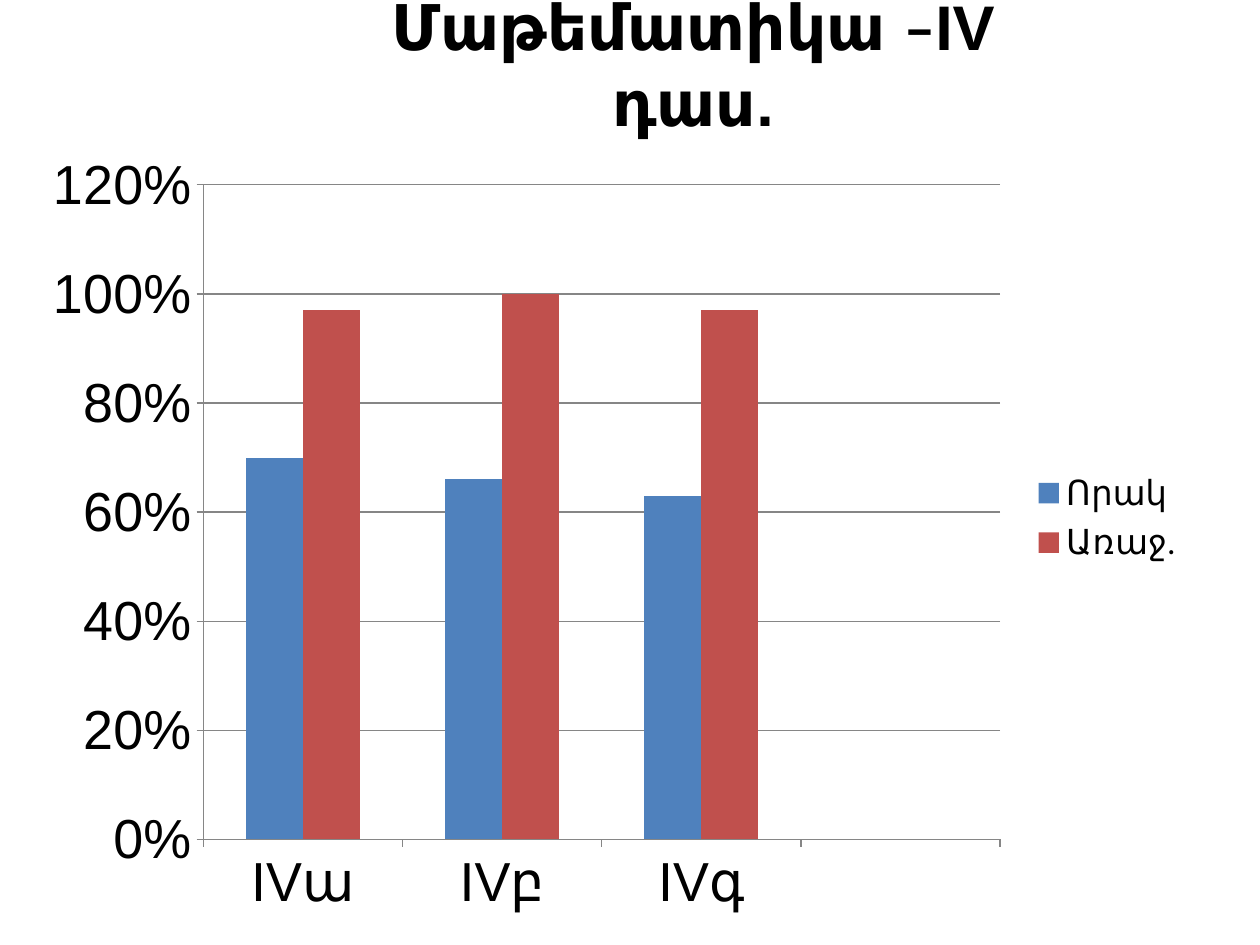
from lxml import etree
from pptx import Presentation
from pptx.chart.data import CategoryChartData
from pptx.dml.color import RGBColor
from pptx.enum.chart import XL_CHART_TYPE as ChartType, XL_LEGEND_POSITION as LegendPos
from pptx.enum.chart import XL_TICK_MARK as TickMark
from pptx.enum.text import MSO_ANCHOR, MSO_AUTO_SIZE, PP_ALIGN
from pptx.oxml.ns import qn
from pptx.util import Inches, Pt

BLACK = RGBColor(0x00, 0x00, 0x00)
GREY = RGBColor(0x86, 0x86, 0x86)
BLUE = RGBColor(0x4F, 0x81, 0xBD)
RED = RGBColor(0xC0, 0x50, 0x4D)

prs = Presentation()
prs.slide_width, prs.slide_height = Inches(10), Inches(7.5)
slide = prs.slides.add_slide(prs.slide_layouts[5])

# Title
title = slide.shapes.title
title.left, title.top = Inches(2.5), Inches(0.15)
title.width, title.height = Inches(6), Inches(0.71)
frame = title.text_frame
frame.word_wrap = True
frame.auto_size = MSO_AUTO_SIZE.NONE
frame.vertical_anchor = MSO_ANCHOR.MIDDLE
heading = frame.paragraphs[0]
heading.alignment = PP_ALIGN.CENTER
heading.font.size = Pt(36)
heading.font.bold = True
heading.font.color.rgb = BLACK
for text, font_name in (("Մաթեմատիկա ", "Arial"), ("–", "Calibri"), ("IV դաս.", "Arial")):
    run = heading.add_run()
    run.text = text
    run.font.name = font_name

# Results by class, with an empty fourth place
results = CategoryChartData(number_format="0%")
results.categories = ["IVա", "IVբ", "IVգ", ""]
results.add_series("Որակ", (0.7, 0.66, 0.63, None))
results.add_series("Առաջ.", (0.97, 1, 0.97, None))
chart = slide.shapes.add_chart(ChartType.COLUMN_CLUSTERED, Inches(0.42), Inches(1.08),
                               Inches(9.08), Inches(6.17), results).chart
chart.has_title = False
chart.font.size = Pt(10)
chart.font.name = "Calibri"
chart.font.color.rgb = BLACK

# Columns
plot = chart.plots[0]
plot.gap_width = 150
plot.overlap = 0
plot.vary_by_categories = False
for series, color in zip(plot.series, (BLUE, RED)):
    series.format.fill.solid()
    series.format.fill.fore_color.rgb = color

# Axes
percent_axis = chart.value_axis
percent_axis.minimum_scale = 0
percent_axis.maximum_scale = 1.2
percent_axis.major_unit = 0.2
percent_axis.tick_labels.number_format = "0%"
percent_axis.tick_labels.number_format_is_linked = False
percent_axis.has_major_gridlines = True
percent_axis.major_gridlines.format.line.color.rgb = GREY
for axis in (chart.category_axis, percent_axis):
    axis.major_tick_mark = TickMark.OUTSIDE
    axis.minor_tick_mark = TickMark.NONE
    axis.format.line.color.rgb = GREY
    axis.tick_labels.font.size = Pt(32)
    axis.tick_labels.font.name = "Arial"
    axis.tick_labels.font.color.rgb = BLACK

# Legend
chart.has_legend = True
chart.legend.position = LegendPos.RIGHT
chart.legend.include_in_layout = False
chart.legend.font.size = Pt(20)

# Fixed place of the plot area, as shares of the chart
plot_area = plot._element.getparent()
for old_layout in plot_area.findall(qn("c:layout")):
    plot_area.remove(old_layout)
layout = etree.Element(qn("c:layout"))
manual = etree.SubElement(layout, qn("c:manualLayout"))
for tag, value in (("layoutTarget", "inner"), ("xMode", "edge"), ("yMode", "edge"),
                   ("x", "0.097"), ("y", "0.064"), ("w", "0.724"), ("h", "0.857")):
    etree.SubElement(manual, qn(f"c:{tag}")).set("val", value)
plot_area.insert(0, layout)

prs.save("out.pptx")
